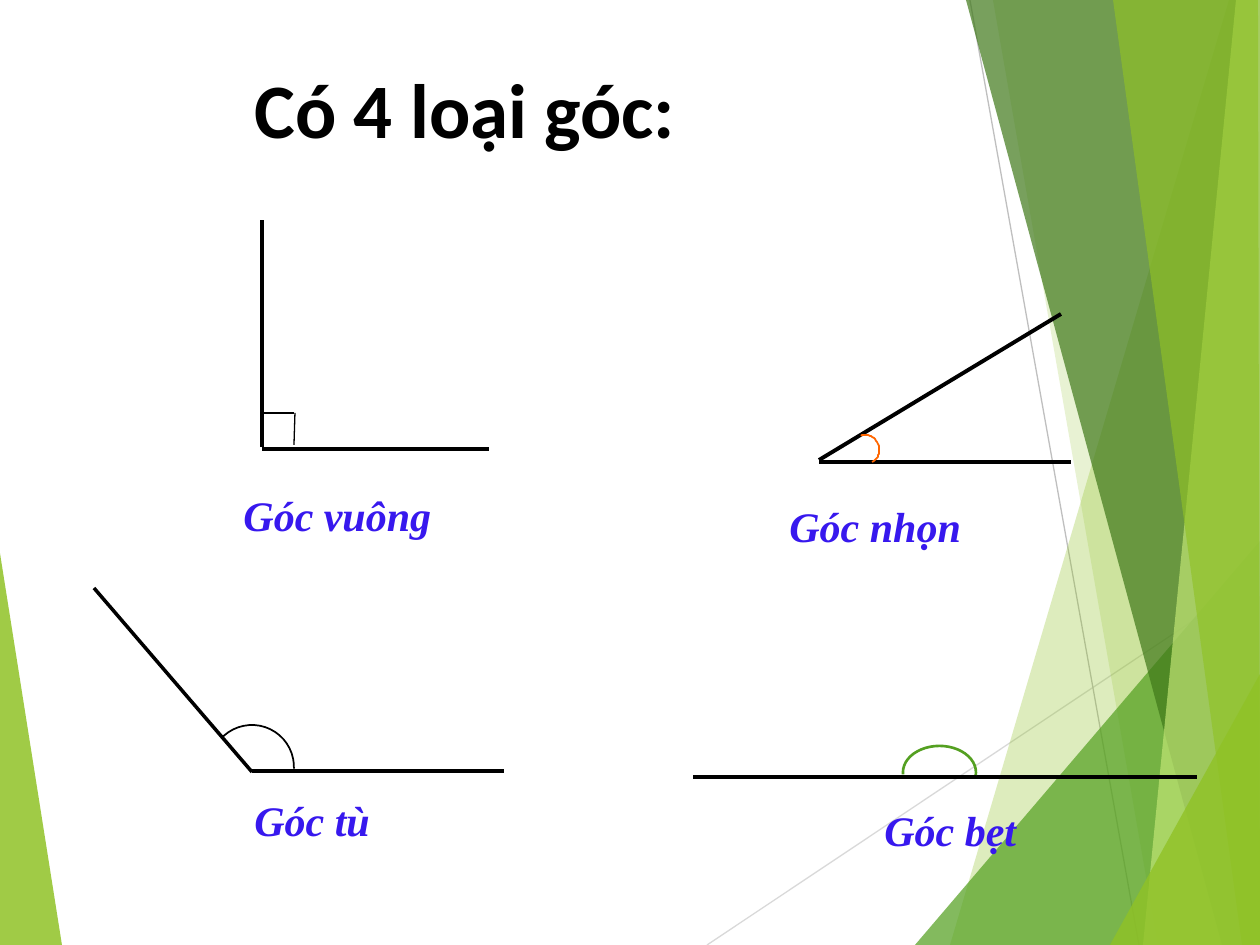
from lxml import etree
from pptx import Presentation
from pptx import util as u
from pptx.dml.color import RGBColor
from pptx.enum import shapes, text
from pptx.oxml.ns import qn

SCALE = u.Inches(1) / 126
WIDTH, HEIGHT = 1260, 945

COLORS = {
    "black": "000000", "label": "3718EE", "orange": "FF6600",
    "green": "54A021", "lime": "90C226", "forest": "3F7819",
    "pale": "C0E474", "silver": "D9D9D9", "gray": "BFBFBF",
}

LEFT_FACET = ("lime", 85, [(0, 553), (62, 945), (0, 945)])
GUIDES = [
    ((707, 945), (1260, 576), "silver", 0.75),
    ((970, 0), (1139, 945), "gray", 0.75),
]
RIGHT_FACETS = [
    ("lime", 30, [(1229, 0), (950, 945), (1260, 945), (1260, 0)]),
    ("lime", 20, [(993, 0), (1158, 945), (1260, 945), (1260, 0)]),
    ("green", 72, [(915, 945), (1260, 541), (1260, 945)]),
    ("forest", 70, [(966, 0), (1222, 945), (1260, 945), (1260, 0)]),
    ("pale", 70, [(1236, 0), (1143, 945), (1260, 945), (1260, 0)]),
    ("lime", 65, [(1113, 0), (1242, 945), (1260, 945), (1258, 0)]),
    ("lime", 80, [(1110, 945), (1260, 674), (1260, 945)]),
]
ANGLE_SIDES = [
    ((262, 449), (489, 449), "black", 2.25),
    ((262, 447), (262, 220), "black", 2.25),
    ((819, 462), (1071, 462), "black", 2.25),
    ((819, 460), (1061, 314), "black", 2.25),
    ((252, 771), (504, 771), "black", 2),
    ((252, 772), (94, 588), "black", 2),
    ((693, 777), (1197, 777), "black", 2),
    ((262, 413), (294, 413), "black", 0.75),
    ((295, 413), (294, 445), "black", 0.75),
]
ARCS = [
    ((903, 746, 73, 53), 0, (106.14, 2.43), "green", 1.5),
    ((210, 725, 84, 84), 348.5, (141.34, 8.2), "black", 1),
]
ACUTE_CURVES = [
    [(861, 436), (867, 433), (873, 436), (877, 442)],
    [(877, 442), (881, 450), (880, 458), (872, 462)],
]
TEXTS = [
    ("Góc vuông", (231, 483, 231, 63), "Times New Roman", 24, "label", True),
    ("Góc nhọn", (777, 494, 525, 63), "Times New Roman", 24, "label", True),
    ("Góc tù", (242, 788, 189, 63), "Times New Roman", 24, "label", True),
    ("Góc bẹt", (872, 798, 199, 63), "Times New Roman", 24, "label", True),
    ("Có 4 loại góc:", (242, 55, 874, 106), "Calibri", 44, "black", False),
]


def emu(lengths):
    return [round(length * SCALE) for length in lengths]


def rgb(name):
    return RGBColor.from_string(COLORS[name])


def set_line(shape, color, points):
    shape.line.color.rgb = rgb(color)
    shape.line.width = u.Pt(points)


def add_outline(page, points, close):
    builder = page.shapes.build_freeform(*points[0], scale=SCALE)
    builder.add_line_segments(points[1:], close=close)
    outline = builder.convert_to_shape()
    outline.shadow.inherit = False
    return outline


def add_facet(page, color, opacity, points):
    facet = add_outline(page, points, True)
    facet.fill.solid()
    facet.fill.fore_color.rgb = rgb(color)
    facet.line.fill.background()
    tint = facet.fill._xPr.find(qn("a:solidFill"))[0]
    etree.SubElement(tint, qn("a:alpha"), val=str(opacity * 1000))


def add_segment(page, start, end, color, points):
    segment = page.shapes.add_connector(
        shapes.MSO_CONNECTOR.STRAIGHT, *emu(start + end))
    set_line(segment, color, points)
    etree.SubElement(segment._element.spPr, qn("a:effectLst"))


def add_arc(page, place, rotation, angles, color, points):
    arc = page.shapes.add_shape(shapes.MSO_SHAPE.ARC, *emu(place))
    arc.shadow.inherit = False
    arc.fill.background()
    arc.rotation = rotation
    for index, angle in enumerate(angles):
        arc.adjustments[index] = angle
    set_line(arc, color, points)


def curve_points(curve, steps=12):
    for step in range(steps + 1):
        t = step / steps
        weights = ((1 - t) ** 3, 3 * t * (1 - t) ** 2, 3 * t * t * (1 - t), t ** 3)
        yield tuple(sum(w * point[axis] for w, point in zip(weights, curve))
                    for axis in (0, 1))


def add_text(page, wording, place, font, size, color, italic):
    box = page.shapes.add_textbox(*emu(place))
    frame = box.text_frame
    frame.word_wrap = True
    frame.auto_size = text.MSO_AUTO_SIZE.SHAPE_TO_FIT_TEXT
    frame.text = wording
    span = frame.paragraphs[0].runs[0]
    span.font.name = font
    span.font.size = u.Pt(size)
    span.font.bold = True
    span.font.italic = italic
    span.font.color.rgb = rgb(color)


def main():
    deck = Presentation()
    deck.slide_width, deck.slide_height = emu((WIDTH, HEIGHT))
    page = deck.slides.add_slide(deck.slide_layouts[6])

    add_facet(page, *LEFT_FACET)
    for guide in GUIDES:
        add_segment(page, *guide)
    for facet in RIGHT_FACETS:
        add_facet(page, *facet)
    for side in ANGLE_SIDES:
        add_segment(page, *side)
    for arc in ARCS:
        add_arc(page, *arc)

    points = [point for curve in ACUTE_CURVES for point in curve_points(curve)]
    acute_mark = add_outline(page, points, False)
    acute_mark.fill.background()
    set_line(acute_mark, "orange", 1)

    for item in TEXTS:
        add_text(page, *item)
    deck.save("out.pptx")


if __name__ == "__main__":
    main()
